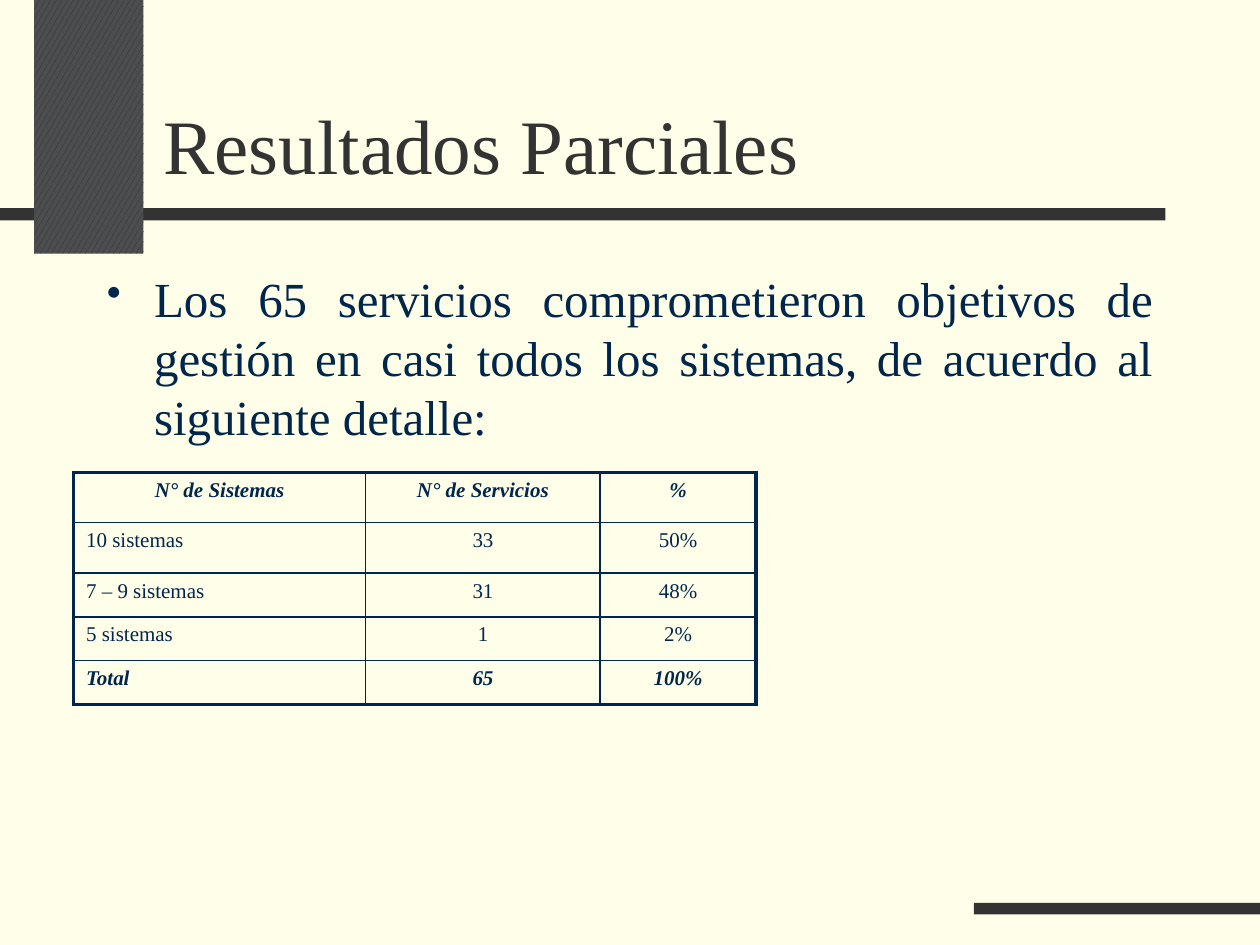
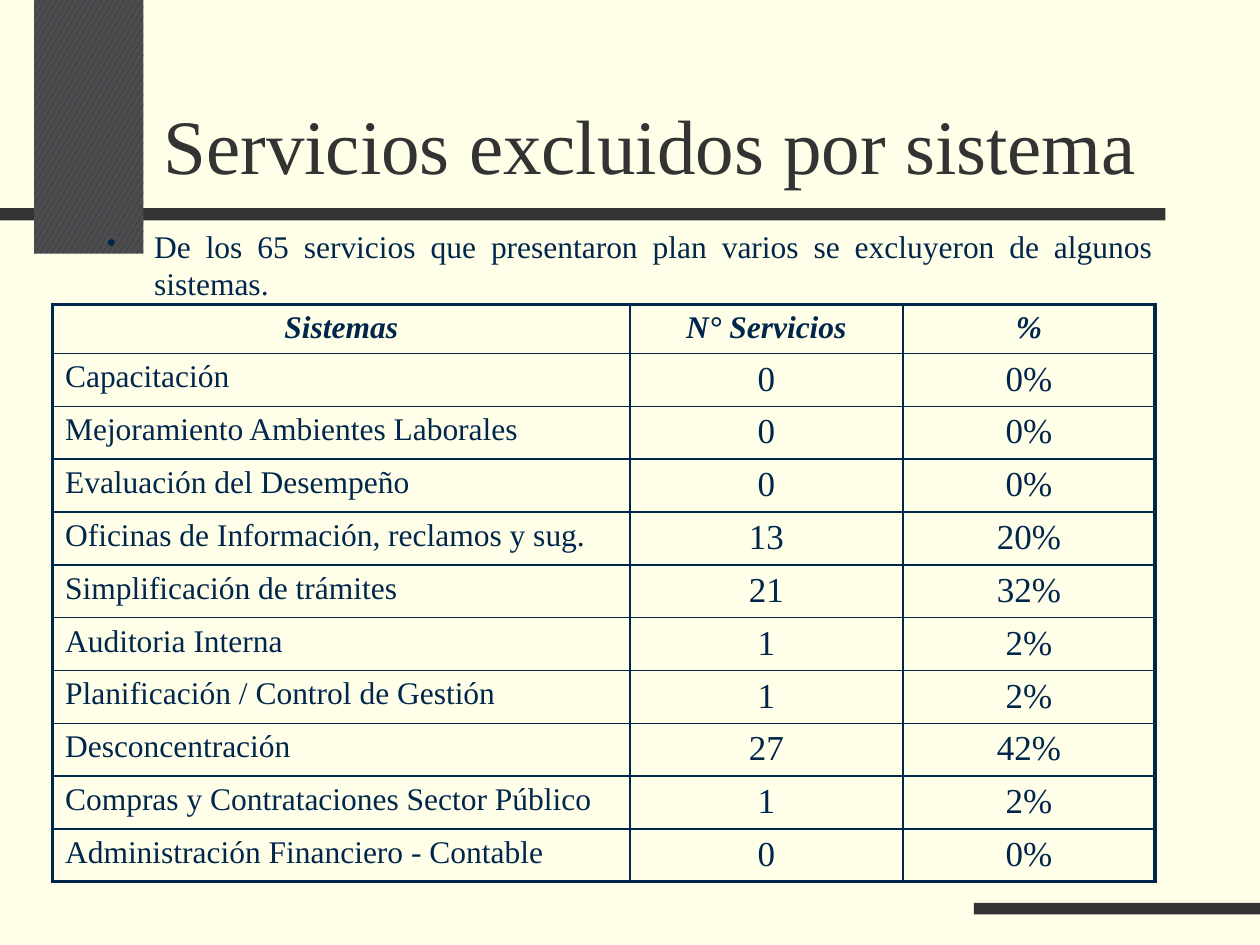
from lxml import etree
from pptx import Presentation
from pptx.dml.color import RGBColor
from pptx.enum.dml import MSO_PATTERN
from pptx.enum.shapes import MSO_SHAPE
from pptx.enum.text import MSO_ANCHOR, PP_ALIGN
from pptx.oxml.ns import qn
from pptx.util import Pt

RECTANGLE = MSO_SHAPE.RECTANGLE
CONFETTI = MSO_PATTERN.LARGE_CONFETTI
BOTTOM, TOP = MSO_ANCHOR.BOTTOM, MSO_ANCHOR.TOP
LEFT, CENTER, JUSTIFY = PP_ALIGN.LEFT, PP_ALIGN.CENTER, PP_ALIGN.JUSTIFY

CREAM = RGBColor(0xFF, 0xFF, 0xE9)
CHARCOAL = RGBColor(0x33, 0x33, 0x33)
GREY = RGBColor(0x4D, 0x4D, 0x4D)
INDIGO = RGBColor(0x26, 0x2D, 0x4C)
NAVY = RGBColor(0x00, 0x26, 0x4C)

FONT = "Times New Roman"
SLIDE_WIDTH, SLIDE_HEIGHT = 720, 540
TITLE_BOX = (86.4, 22, 612, 90)
THIN, THICK = 1, 2.25

SYSTEM_COUNTS = [
    ("N° de Sistemas", "N° de Servicios", "%"),
    ("10 sistemas", "33", "50%"),
    ("7 – 9 sistemas", "31", "48%"),
    ("5 sistemas", "1", "2%"),
    ("Total", "65", "100%"),
]
EXCLUDED_SERVICES = [
    ("Sistemas", "N° Servicios", "%"),
    ("Capacitación", "0", "0%"),
    ("Mejoramiento Ambientes Laborales", "0", "0%"),
    ("Evaluación del Desempeño", "0", "0%"),
    ("Oficinas de Información, reclamos y sug.", "13", "20%"),
    ("Simplificación de trámites", "21", "32%"),
    ("Auditoria Interna", "1", "2%"),
    ("Planificación / Control de Gestión", "1", "2%"),
    ("Desconcentración", "27", "42%"),
    ("Compras y Contrataciones Sector Público", "1", "2%"),
    ("Administración Financiero - Contable", "0", "0%"),
]


def points(*lengths):
    return [Pt(length) for length in lengths]


def style_text(paragraph, size, color, emphasis=False):
    for run in paragraph.runs:
        font = run.font
        font.name, font.size, font.color.rgb = FONT, Pt(size), color
        font.bold = font.italic = emphasis


def add_band(slide, box):
    band = slide.shapes.add_shape(RECTANGLE, *points(*box))
    band.shadow.inherit = False
    band.line.fill.background()
    band.fill.solid()
    band.fill.fore_color.rgb = CHARCOAL
    return band


def add_text(slide, box, text, size, color, anchor=TOP):
    text_frame = slide.shapes.add_textbox(*points(*box)).text_frame
    text_frame.word_wrap = True
    text_frame.vertical_anchor = anchor
    text_frame.text = text
    style_text(text_frame.paragraphs[0], size, color)
    return text_frame


def add_base_slide(presentation, title):
    slide = presentation.slides.add_slide(presentation.slide_layouts[6])
    slide.background.fill.solid()
    slide.background.fill.fore_color.rgb = CREAM
    # Title rule, patterned column and footer rule
    add_band(slide, (0, 119, 666, 7))
    column = add_band(slide, (19.5, 0, 62.5, 145))
    column.fill.patterned()
    column.fill.pattern = CONFETTI
    column.fill.fore_color.rgb = INDIGO
    column.fill.back_color.rgb = GREY
    add_band(slide, (556.5, 516, SLIDE_WIDTH - 556.5, 6.5))
    # Title
    add_text(slide, TITLE_BOX, title, 44, CHARCOAL, BOTTOM)
    return slide


def add_bullet(slide, box, text, size):
    paragraph = add_text(slide, box, text, size, NAVY).paragraphs[0]
    paragraph.alignment = JUSTIFY
    properties = paragraph._p.get_or_add_pPr()
    properties.set("marL", str(Pt(27)))
    properties.set("indent", str(Pt(-27)))
    etree.SubElement(properties, qn("a:buSzPct"), val="85000")
    etree.SubElement(properties, qn("a:buChar"), char="•")


def add_borders(cell, widths):
    properties = cell._tc.get_or_add_tcPr()
    for side, width in zip("LRTB", widths):
        line = etree.SubElement(properties, qn(f"a:ln{side}"), w=str(Pt(width)))
        fill = etree.SubElement(line, qn("a:solidFill"))
        etree.SubElement(fill, qn("a:srgbClr"), val=str(NAVY))


def add_grid(slide, origin, widths, heights, rows, label_size, value_size, has_total=False):
    box = (*origin, sum(widths), sum(heights))
    table = slide.shapes.add_table(len(rows), len(widths), *points(*box)).table
    table.first_row = table.horz_banding = False
    for column, width in zip(table.columns, widths):
        column.width = Pt(width)
    for row, height in zip(table.rows, heights):
        row.height = Pt(height)
    last_row, last_column = len(rows) - 1, len(widths) - 1
    for i, row in enumerate(rows):
        for j, text in enumerate(row):
            cell = table.cell(i, j)
            # Thick frame around thin inner lines
            outer = (j == 0, j == last_column, i == 0, i == last_row)
            add_borders(cell, [THICK if edge else THIN for edge in outer])
            cell.fill.background()
            # Small bottom margin, so the text fits the row height
            cell.margin_bottom = Pt(2)
            # Emphasised header and total, centred values
            cell.text_frame.text = text
            paragraph = cell.text_frame.paragraphs[0]
            paragraph.alignment = LEFT if i and not j else CENTER
            emphasis = i == 0 or (has_total and i == last_row)
            style_text(paragraph, value_size if i and j else label_size, NAVY, emphasis)


def build_partial_results(presentation):
    slide = add_base_slide(presentation, "Resultados Parciales")
    add_bullet(slide, (54, 150, 612, 354),
               "Los 65 servicios comprometieron objetivos de gestión en casi todos "
               "los sistemas, de acuerdo al siguiente detalle:", 28)
    add_grid(slide, (42, 270), (167, 134, 89), (28.5, 29, 25, 25, 25),
             SYSTEM_COUNTS, 12, 12, has_total=True)


def build_excluded_services(presentation):
    slide = add_base_slide(presentation, "Servicios excluidos por sistema")
    add_bullet(slide, (54, 126, 612, 354),
               "De los 65 servicios que presentaron plan varios se excluyeron de "
               "algunos sistemas.", 18)
    add_grid(slide, (30, 174), (330, 156, 144), [28] + [30.2] * 10,
             EXCLUDED_SERVICES, 18, 20)


def main():
    presentation = Presentation()
    presentation.slide_width, presentation.slide_height = points(SLIDE_WIDTH, SLIDE_HEIGHT)
    build_partial_results(presentation)
    build_excluded_services(presentation)
    presentation.save("out.pptx")


if __name__ == "__main__":
    main()
